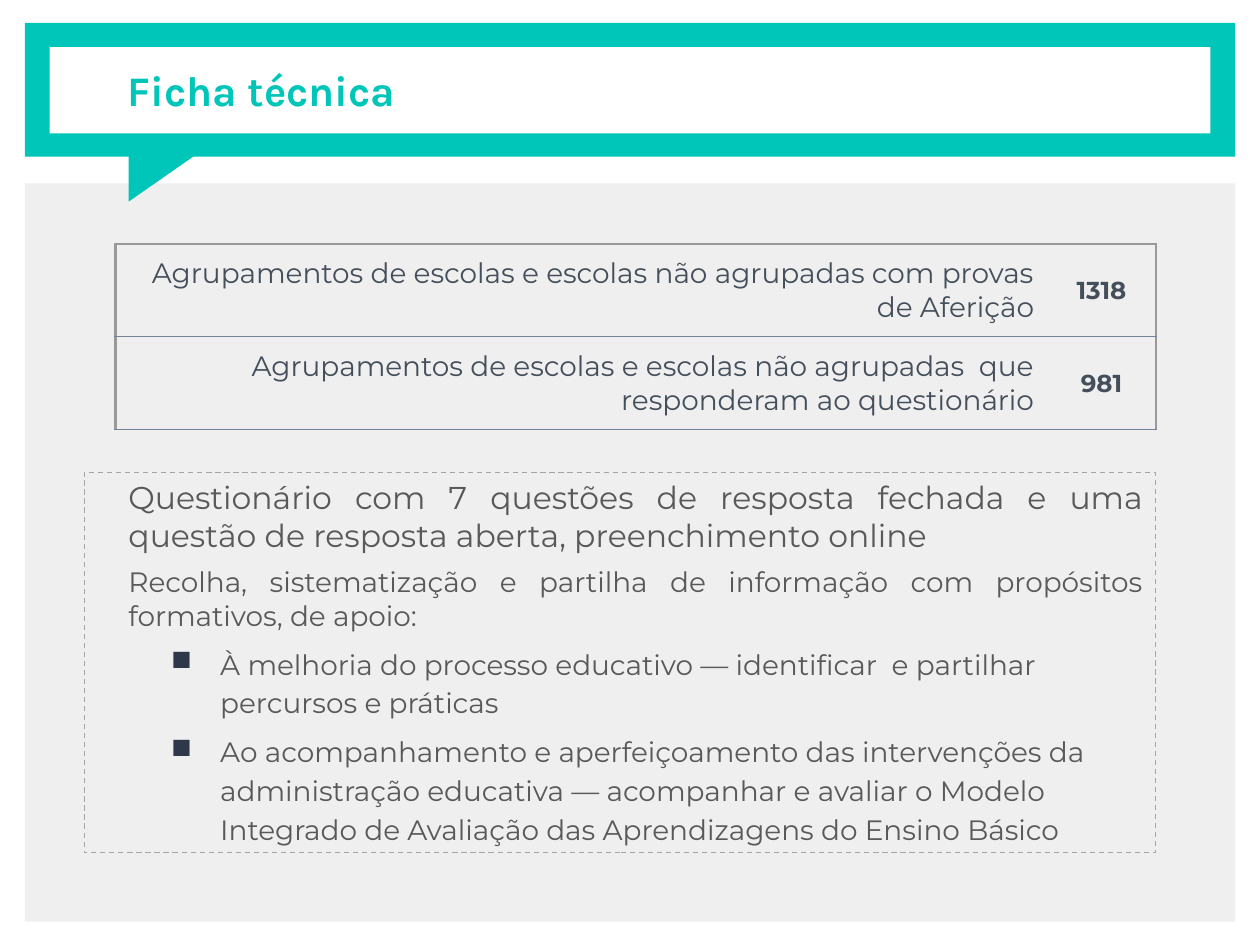
"""Builds the "Ficha técnica" slide with its sample table and questionnaire notes."""
from lxml.etree import SubElement
from pptx import Presentation
from pptx.dml.color import RGBColor
from pptx.enum.dml import MSO_LINE_DASH_STYLE as Dash
from pptx.enum.shapes import MSO_SHAPE as Preset
from pptx.enum.text import MSO_ANCHOR as Anchor, MSO_AUTO_SIZE as AutoSize, PP_ALIGN as Align
from pptx.oxml.ns import qn
from pptx.util import Cm, Pt

TEAL = RGBColor(0x00, 0xC5, 0xB9)
WHITE = RGBColor(0xFF, 0xFF, 0xFF)
PANEL = RGBColor(0xEF, 0xEF, 0xEF)
SLATE = RGBColor(0x45, 0x4F, 0x5B)
BODY = RGBColor(0x59, 0x59, 0x59)
DASHES = RGBColor(0xA6, 0xA6, 0xA6)
BULLET = RGBColor(0x2F, 0x38, 0x48)
FRAME = (RGBColor(0x99, 0x99, 0x99), 1.5)
RULE = (RGBColor(0x73, 0x84, 0x98), 0.75)


def write(paragraph, text, size=16, color=BODY, font="Montserrat", bold=False,
          align=Align.LEFT, before=0, spacing=None, left=0, hanging=0, bullet=None):
    run = paragraph.add_run()
    run.text = text
    run.font.name, run.font.size, run.font.bold = font, Pt(size), bold
    run.font.color.rgb = color
    paragraph.alignment = align
    paragraph.space_before = Pt(before)
    if spacing:
        paragraph.line_spacing = spacing
    properties = paragraph._p.get_or_add_pPr()
    properties.set("marL", str(Cm(left)))
    properties.set("indent", str(-Cm(hanging)))
    if bullet:
        tint = SubElement(properties, qn("a:buClr"))
        SubElement(tint, qn("a:srgbClr")).set("val", str(BULLET))
        SubElement(properties, qn("a:buChar")).set("char", bullet)


class SlideBuilder:
    """Holds the current slide and draws its elements in one style."""

    def __init__(self, slide):
        self.slide = slide

    def block(self, preset, box, fill=None, rotation=0):
        block = self.slide.shapes.add_shape(preset, *map(Cm, box))
        block.shadow.inherit = False
        block.rotation = rotation
        block.line.fill.background()
        if fill is None:
            block.fill.background()
        else:
            block.fill.solid()
            block.fill.fore_color.rgb = fill
        return block

    def title(self, box, text):
        heading = self.slide.shapes.add_textbox(*map(Cm, box)).text_frame
        heading.word_wrap = True
        heading.vertical_anchor = Anchor.MIDDLE
        heading.margin_left = heading.margin_right = Cm(0.25)
        write(heading.paragraphs[0], text, size=24, color=TEAL, font="Karla", bold=True)

    def notes(self, box, entries):
        panel = self.block(Preset.RECTANGLE, box)
        panel.line.color.rgb = DASHES
        panel.line.width = Pt(0.75)
        panel.line.dash_style = Dash.DASH
        frame = panel.text_frame
        frame.word_wrap = True
        frame.auto_size = AutoSize.SHAPE_TO_FIT_TEXT
        frame.vertical_anchor = Anchor.TOP
        for index, (text, style) in enumerate(entries):
            paragraph = frame.add_paragraph() if index else frame.paragraphs[0]
            write(paragraph, text, **style)

    def borders(self, cell, **edges):
        properties = cell._tc.get_or_add_tcPr()
        for side in "LRTB":
            color, width = edges.get(side, (None, 0))
            edge = SubElement(properties, qn(f"a:ln{side}"), w=str(Pt(width)))
            if color is None:
                SubElement(edge, qn("a:noFill"))
            else:
                fill = SubElement(edge, qn("a:solidFill"))
                SubElement(fill, qn("a:srgbClr")).set("val", str(color))
        cell.fill.background()

    def table(self, box, widths, rows):
        table = self.slide.shapes.add_table(len(rows), len(widths), *map(Cm, box)).table
        table.first_row = table.horz_banding = False
        for column, width in zip(table.columns, widths):
            column.width = Cm(width)
        styles = (dict(size=16, align=Align.RIGHT), dict(size=14, bold=True, align=Align.CENTER))
        for r, row in enumerate(rows):
            for c, (text, style, margin, side) in enumerate(zip(row, styles, (0.25, 0), "LR")):
                cell = table.cell(r, c)
                cell.vertical_anchor = Anchor.MIDDLE
                cell.margin_left = cell.margin_right = Cm(margin)
                cell.margin_top = cell.margin_bottom = Cm(margin)
                write(cell.text_frame.paragraphs[0], text, color=SLATE, **style)
                self.borders(cell, **{side: FRAME, "T": RULE if r else FRAME, "B": RULE})


def main():
    deck = Presentation()
    deck.slide_width, deck.slide_height = Cm(25.4), Cm(19.05)
    page = SlideBuilder(deck.slides.add_slide(deck.slide_layouts[6]))

    page.block(Preset.RECTANGLE, (0.5, 3.7, 24.4, 14.88), PANEL)
    page.block(Preset.RECTANGLE, (0.5, 0.46, 24.4, 2.7), TEAL)
    page.block(Preset.RIGHT_TRIANGLE, (2.86, 2.58, 1.22, 1.75), TEAL, rotation=90)
    page.block(Preset.RECTANGLE, (1, 0.95, 23.4, 1.74), WHITE)
    page.title((2.32, 0.46, 22.1, 2.7), "Ficha técnica")

    page.table((2.33, 4.92, 20.98, 3.74), (18.77, 2.21), (
        ("Agrupamentos de escolas e escolas não agrupadas com provas de Aferição", "1318"),
        ("Agrupamentos de escolas e escolas não agrupadas  que responderam ao questionário", "981"),
    ))

    intro = dict(align=Align.JUSTIFY, left=0.64)
    support = dict(before=6, spacing=1.15, left=2.49, hanging=0.99, bullet="■")
    page.notes((1.7, 9.52, 21.6, 7.67), (
        ("Questionário com 7 questões de resposta fechada e uma questão de resposta aberta, "
         "preenchimento online", dict(intro, size=18)),
        ("Recolha, sistematização e partilha de informação com propósitos formativos, de apoio:",
         dict(intro, before=6)),
        ("À melhoria do processo educativo — identificar  e partilhar percursos e práticas", support),
        ("Ao acompanhamento e aperfeiçoamento das intervenções da administração educativa — "
         "acompanhar e avaliar o Modelo Integrado de Avaliação das Aprendizagens do Ensino Básico",
         support),
    ))
    deck.save("out.pptx")


if __name__ == "__main__":
    main()
